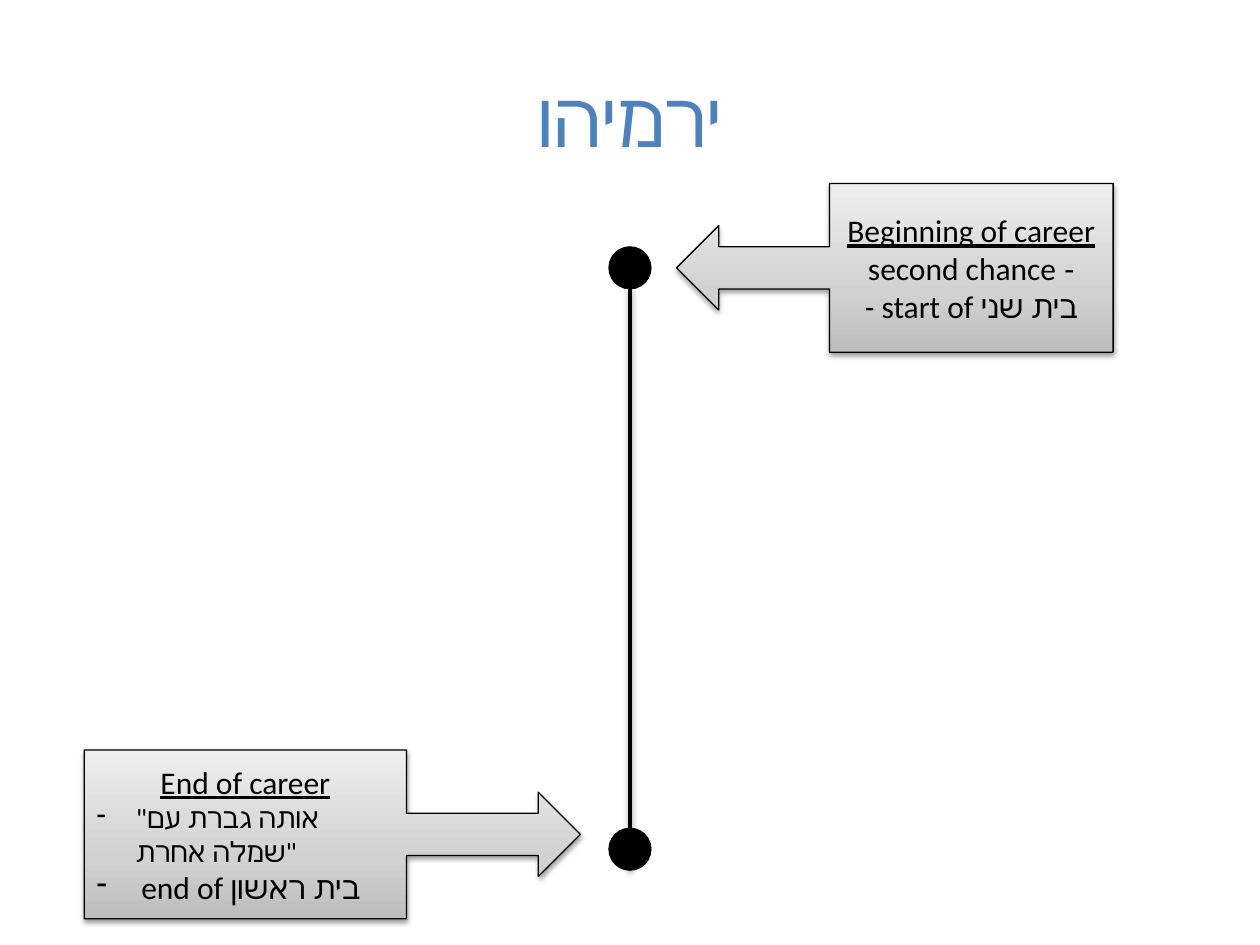
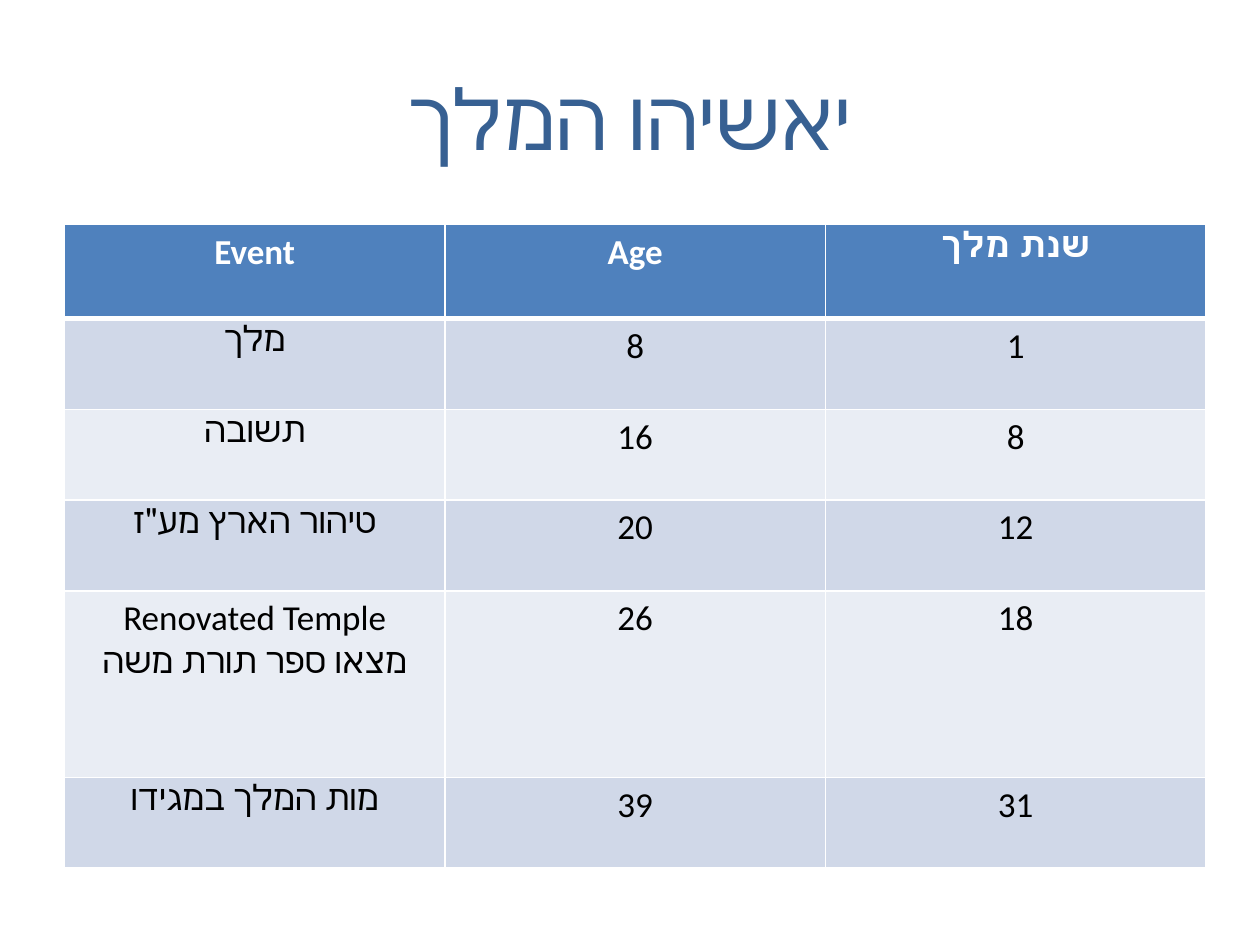
from copy import deepcopy
from dataclasses import dataclass

from lxml.etree import SubElement
from pptx import Presentation
from pptx.dml.color import RGBColor
from pptx.enum.shapes import MSO_CONNECTOR, MSO_SHAPE
from pptx.enum.text import MSO_ANCHOR, PP_ALIGN
from pptx.oxml.ns import qn
from pptx.util import Cm, Pt


@dataclass(frozen=True)
class Theme:
    title_font: str = "Arial"
    body_font: str = "Calibri"
    black: str = "000000"
    white: str = "FFFFFF"
    blue: str = "4F81BD"
    dark_blue: str = "376092"
    row_fills: tuple = ("D0D8E8", "E9EDF4")
    callout_stops: tuple = ((0, "BDBDBD"), (0.35, "D1D1D1"), (1, "EEEEEE"))
    body_size: float = 18
    quote_size: float = 16
    table_size: float = 20
    outline: float = 0.75
    timeline: float = 2
    grid: float = 1
    header_rule: float = 3


THEME = Theme()

# Content: each paragraph is (text, format)
TIMELINE_TITLE = ("ירמיהו", dict(size=44, color=THEME.blue))
KING_TITLE = ("יאשיהו המלך", dict(size=48, color=THEME.dark_blue))

CALLOUTS = [
    dict(
        kind=MSO_SHAPE.LEFT_ARROW_CALLOUT,
        box=(13.64, 3.7, 8.8, 3.4),
        paragraphs=[
            ("Beginning of career", dict(underline=True, rtl=True)),
            ("- second chance", dict(rtl=True)),
            ("- start of בית שני", {}),
        ],
    ),
    dict(
        kind=MSO_SHAPE.RIGHT_ARROW_CALLOUT,
        box=(1.7, 15.12, 10, 3.4),
        paragraphs=[
            ("End of career", dict(underline=True)),
            ('"אותה גברת עם שמלה אחרת"',
             dict(size=THEME.quote_size, align=PP_ALIGN.LEFT, bullet="-", indent=0.79)),
            ("end of בית ראשון", dict(align=PP_ALIGN.LEFT, bullet="-", indent=0.9)),
        ],
    ),
]

KING_TABLE = [
    ("Event", "Age", "שנת מלך"),
    ("מלך", "8", "1"),
    ("תשובה", "16", "8"),
    ('טיהור הארץ מע"ז', "20", "12"),
    ("Renovated Temple\nמצאו ספר תורת משה", "26", "18"),
    ("מות המלך במגידו", "39", "31"),
]

# Geometry in centimetres
SLIDE_WIDTH, SLIDE_HEIGHT = 25.4, 19.05
TITLE_BOX = (1.27, 0.76, 22.86, 3.18)
DOT_SIZE = 0.8
DOT_TOPS = (5, 16.72)
TABLE_LEFT, TABLE_TOP = 1.3, 4.52
COLUMN_WIDTH = 7.67
ROW_HEIGHTS = (1.9, 1.83, 1.83, 1.83, 3.76, 1.83)


def lengths(*values):
    return [Cm(value) for value in values]


def write_text(paragraph, text, *, size=THEME.body_size, font=THEME.body_font,
               color=THEME.black, align=PP_ALIGN.CENTER, bold=False, underline=False,
               rtl=False, bullet=None, indent=0, spacing=None):
    paragraph.alignment = align
    paragraph.line_spacing = spacing
    properties = paragraph._p.get_or_add_pPr()
    if rtl:
        properties.set("rtl", "1")
    if bullet:
        properties.set("marL", str(Cm(indent)))
        properties.set("indent", str(-Cm(indent)))
        SubElement(properties, qn("a:buChar"), char=bullet)
    run = paragraph.add_run()
    run.text = text
    run.font.name = font
    run.font.size = Pt(size)
    run.font.bold = bold
    run.font.underline = underline
    run.font.color.rgb = RGBColor.from_string(color)


def fill_frame(frame, paragraphs, **shared):
    frame.word_wrap = True
    for index, (text, own) in enumerate(paragraphs):
        paragraph = frame.add_paragraph() if index else frame.paragraphs[0]
        write_text(paragraph, text, **{**shared, **own})


def set_line(line, color, width):
    line.color.rgb = RGBColor.from_string(color)
    line.width = Pt(width)


def add_shadow(shape):
    """Give the shape a soft shadow straight below it."""
    properties = shape._element.spPr
    effects = properties.find(qn("a:effectLst"))
    if effects is None:
        effects = SubElement(properties, qn("a:effectLst"))
    shadow = SubElement(effects, qn("a:outerShdw"), blurRad=str(Pt(3.1)),
                        dist=str(Pt(1.6)), dir="5400000", rotWithShape="0")
    color = SubElement(shadow, qn("a:srgbClr"), val=THEME.black)
    SubElement(color, qn("a:alpha"), val="38000")


def add_titled_slide(presentation, title):
    slide = presentation.slides.add_slide(presentation.slide_layouts[6])
    frame = slide.shapes.add_textbox(*lengths(*TITLE_BOX)).text_frame
    frame.vertical_anchor = MSO_ANCHOR.MIDDLE
    fill_frame(frame, [title], font=THEME.title_font, rtl=True)
    return slide


def add_timeline(slide):
    center = SLIDE_WIDTH / 2
    first_bottom, last_bottom = (top + DOT_SIZE for top in DOT_TOPS)
    line = slide.shapes.add_connector(
        MSO_CONNECTOR.STRAIGHT, *lengths(center, first_bottom, center, last_bottom))
    set_line(line.line, THEME.black, THEME.timeline)
    add_shadow(line)
    for top in DOT_TOPS:
        dot = slide.shapes.add_shape(
            MSO_SHAPE.OVAL, *lengths(center - DOT_SIZE / 2, top, DOT_SIZE, DOT_SIZE))
        dot.shadow.inherit = False
        dot.fill.solid()
        dot.fill.fore_color.rgb = RGBColor.from_string(THEME.black)
        set_line(dot.line, THEME.black, THEME.timeline)


def fill_gradient(shape, stops):
    """Fill the shape with three or more colours running from bottom to top."""
    shape.fill.gradient()
    shape.fill.gradient_angle = 90
    stop_list = shape._element.spPr.find(qn("a:gradFill")).find(qn("a:gsLst"))
    while len(stop_list) < len(stops):
        stop_list.append(deepcopy(stop_list[0]))
    for stop, (position, color) in zip(shape.fill.gradient_stops, stops):
        stop.position = position
        stop.color.rgb = RGBColor.from_string(color)


def add_callout(slide, kind, box, paragraphs):
    callout = slide.shapes.add_shape(kind, *lengths(*box))
    callout.shadow.inherit = False
    fill_gradient(callout, THEME.callout_stops)
    set_line(callout.line, THEME.black, THEME.outline)
    add_shadow(callout)
    callout.text_frame.vertical_anchor = MSO_ANCHOR.MIDDLE
    fill_frame(callout.text_frame, paragraphs)


def set_borders(cell, **widths):
    properties = cell._tc.get_or_add_tcPr()
    for side in "LRTB":
        border = SubElement(properties, qn(f"a:ln{side}"),
                            w=str(Pt(widths.get(side, THEME.grid))))
        fill = SubElement(border, qn("a:solidFill"))
        SubElement(fill, qn("a:srgbClr"), val=THEME.white)


def add_king_table(slide):
    columns = len(KING_TABLE[0])
    table = slide.shapes.add_table(
        len(KING_TABLE), columns,
        *lengths(TABLE_LEFT, TABLE_TOP, columns * COLUMN_WIDTH, sum(ROW_HEIGHTS))).table
    for column in table.columns:
        column.width = Cm(COLUMN_WIDTH)
    for row_index, (values, height) in enumerate(zip(KING_TABLE, ROW_HEIGHTS)):
        table.rows[row_index].height = Cm(height)
        header = row_index == 0
        fill = THEME.blue if header else THEME.row_fills[(row_index - 1) % 2]
        rules = {0: dict(B=THEME.header_rule), 1: dict(T=THEME.header_rule)}
        for column_index, value in enumerate(values):
            cell = table.cell(row_index, column_index)
            cell.margin_left = cell.margin_right = Cm(0.18)
            cell.margin_top = cell.margin_bottom = 0
            set_borders(cell, **rules.get(row_index, {}))
            cell.fill.solid()
            cell.fill.fore_color.rgb = RGBColor.from_string(fill)
            fill_frame(cell.text_frame, [(line, {}) for line in value.split("\n")],
                       size=THEME.table_size, spacing=1.15, bold=header,
                       color=THEME.white if header else THEME.black)


def main():
    presentation = Presentation()
    presentation.slide_width, presentation.slide_height = lengths(SLIDE_WIDTH, SLIDE_HEIGHT)

    timeline_slide = add_titled_slide(presentation, TIMELINE_TITLE)
    add_timeline(timeline_slide)
    for callout in CALLOUTS:
        add_callout(timeline_slide, **callout)

    add_king_table(add_titled_slide(presentation, KING_TITLE))
    presentation.save("out.pptx")


if __name__ == "__main__":
    main()
